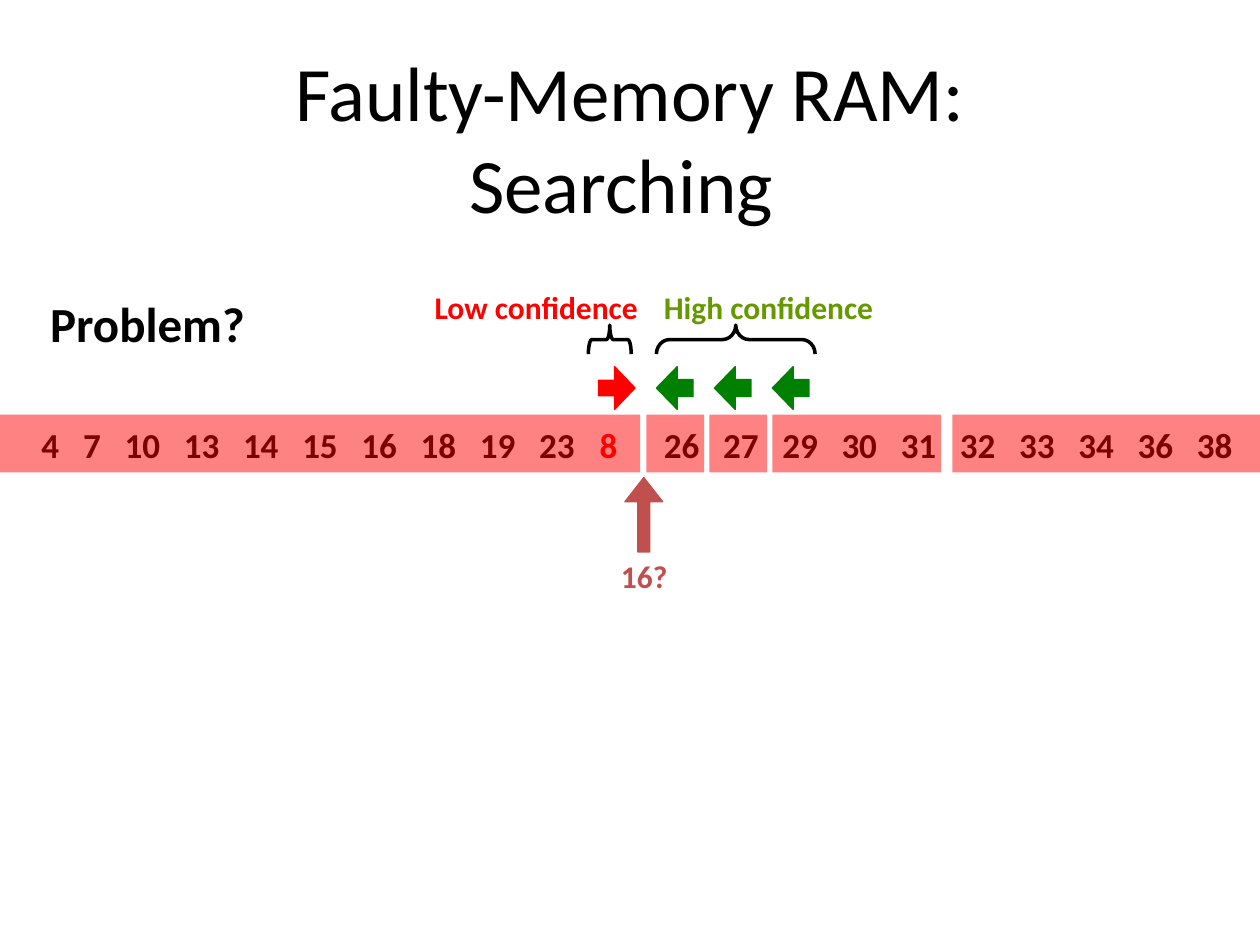
from lxml import etree
from pptx import Presentation
from pptx.dml.color import RGBColor
from pptx.enum.shapes import MSO_SHAPE
from pptx.enum.text import MSO_ANCHOR, PP_ALIGN
from pptx.oxml.ns import qn
from pptx.util import Inches, Pt

LEFT, CENTER, RIGHT = PP_ALIGN.LEFT, PP_ALIGN.CENTER, PP_ALIGN.RIGHT
TOP, MIDDLE = MSO_ANCHOR.TOP, MSO_ANCHOR.MIDDLE
RECTANGLE, BRACE = MSO_SHAPE.RECTANGLE, MSO_SHAPE.RIGHT_BRACE
LEFT_ARROW, RIGHT_ARROW = MSO_SHAPE.LEFT_ARROW, MSO_SHAPE.RIGHT_ARROW
UP_ARROW = MSO_SHAPE.UP_ARROW

BLACK, RED, GREEN = "000000", "FF0000", "008000"
OLIVE, BRICK = "669900", "C0504D"
PITCH = 0.47
VALUES = [4, 7, 10, 13, 14, 15, 16, 18, 19, 23, 8,
          26, 27, 29, 30, 31, 32, 33, 34, 36, 38]
FAULTY_VALUE = 8
VALUE_CENTERS = ([0.4, 0.73] + [1.13 + PITCH * i for i in range(8)]
                 + [4.83] + [5.41 + PITCH * i for i in range(10)])
SEGMENTS = [(0, 5.08), (5.13, 0.46), (5.63, 0.46), (6.13, 1.34), (7.56, 2.44)]


def color(hex_string):
    return RGBColor.from_string(hex_string)


def inches(box):
    return [Inches(length) for length in box]


def style_span(span, size, hex_string, bold=True):
    span.font.name = "Calibri"
    span.font.size = Pt(size)
    span.font.bold = bold
    span.font.color.rgb = color(hex_string)


def add_label(page, box, text, size, hex_string, align=LEFT, anchor=TOP):
    frame = page.shapes.add_textbox(*inches(box)).text_frame
    frame.word_wrap = True
    frame.vertical_anchor = anchor
    frame.text = text
    para = frame.paragraphs[0]
    para.alignment = align
    style_span(para.runs[0], size, hex_string)


def add_figure(page, kind, box, fill=None, line=None, width=0.75, adjust=()):
    figure = page.shapes.add_shape(kind, *inches(box))
    figure.shadow.inherit = False
    for index, value in enumerate(adjust):
        figure.adjustments[index] = value
    if fill:
        figure.fill.solid()
        figure.fill.fore_color.rgb = color(fill)
    else:
        figure.fill.background()
    if line:
        figure.line.color.rgb = color(line)
        figure.line.width = Pt(width)
    else:
        figure.line.fill.background()
    return figure


def add_title(page, box):
    title = page.shapes.title
    title.left, title.top, title.width, title.height = inches(box)
    frame = title.text_frame
    frame.text = "Faulty-Memory RAM:\vSearching "
    frame.vertical_anchor = MIDDLE
    para = frame.paragraphs[0]
    para.alignment = CENTER
    for span in para.runs:
        style_span(span, 44, BLACK, bold=False)


def add_values(page, box):
    frame = page.shapes.add_textbox(*inches(box)).text_frame
    frame.word_wrap = True
    frame.margin_left = frame.margin_right = 0
    para = frame.paragraphs[0]
    tabs = etree.SubElement(para._p.get_or_add_pPr(), qn("a:tabLst"))
    for center in VALUE_CENTERS:
        etree.SubElement(tabs, qn("a:tab"), pos=str(Inches(center)), algn="ctr")
    for value in VALUES:
        span = para.add_run()
        span.text = f"\t{value}"
        style_span(span, 20, RED if value == FAULTY_VALUE else BLACK)


def add_memory(page, box):
    left, top, width, height = box
    add_values(page, (left, top + 0.02, width, height))
    for offset, length in SEGMENTS:
        segment = add_figure(page, RECTANGLE,
                             (left + offset, top, length, height), RED)
        fill_color = segment.fill._xPr.find(".//" + qn("a:srgbClr"))
        etree.SubElement(fill_color, qn("a:alpha"), val="49000")


def add_brace(page, box, curve):
    left, top, width, height = box
    upright = (left + (width - height) / 2, top + (height - width) / 2,
               height, width)
    brace = add_figure(page, BRACE, upright, line=BLACK, width=2,
                       adjust=(curve, 0.5))
    brace.rotation = 270


def add_confidence(page, box):
    left, top, width, height = box
    arrow_top = top + 0.67
    add_label(page, (left, top, 3.69, 0.4), "Low confidence", 18, RED, RIGHT)
    add_label(page, (left + 3.7, top, 3.69, 0.4), "High confidence", 18, OLIVE)
    add_brace(page, (left + 3.2, top + 0.34, 0.34, 0.23), 0.12)
    add_brace(page, (left + 3.74, top + 0.34, 1.26, 0.23), 0.46)
    add_figure(page, RIGHT_ARROW, (left + 3.28, arrow_top, 0.29, 0.34),
               RED, RED, adjust=(0.36, 0.56))
    for step in range(3):
        add_figure(page, LEFT_ARROW,
                   (left + 3.74 + 0.46 * step, arrow_top, 0.29, 0.34),
                   GREEN, GREEN, adjust=(0.4, 0.57))


def add_query(page, box):
    left, top, width, height = box
    add_figure(page, UP_ARROW, (left + 0.13, top, 0.3, 0.59),
               BRICK, BRICK, adjust=(0.32, 0.64))
    add_label(page, (left, top + 0.59, width, 0.38), "16?", 18, BRICK,
              anchor=MIDDLE)


def main():
    deck = Presentation()
    deck.slide_width, deck.slide_height = Inches(10), Inches(7.5)
    page = deck.slides.add_slide(deck.slide_layouts[5])
    add_title(page, (0.5, 0, 9, 2.17))
    add_memory(page, (0, 3.29, 10, 0.46))
    add_query(page, (4.83, 3.79, 0.67, 0.97))
    add_confidence(page, (1.47, 2.24, 7.39, 1.01))
    add_label(page, (0.3, 2.28, 2.81, 0.57), "Problem?", 28, BLACK)
    deck.save("out.pptx")


if __name__ == "__main__":
    main()
